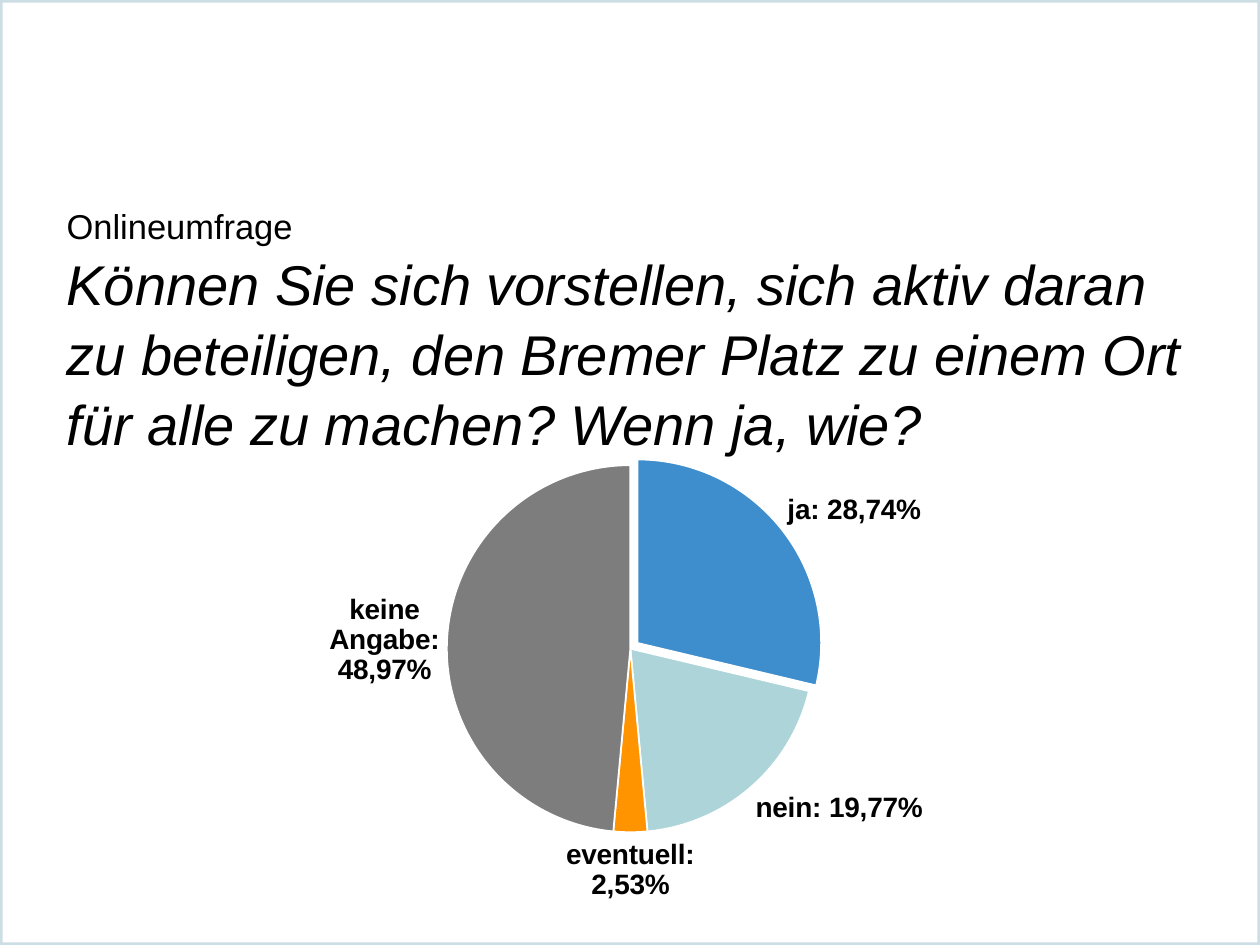
from dataclasses import dataclass

from lxml import etree
from pptx import Presentation
from pptx import util as u
from pptx.chart.data import CategoryChartData
from pptx.dml.color import RGBColor
from pptx.enum import chart as charts, shapes, text
from pptx.oxml.ns import qn


@dataclass(frozen=True)
class Theme:
    font: str = "Arial"
    ink: str = "000000"
    paper: str = "FFFFFF"
    frame: str = "005B79"
    frame_opacity: int = 20
    kicker_size: float = 19.7
    question_size: float = 32
    label_size: float = 16


@dataclass(frozen=True)
class Frame:
    left: float
    top: float
    width: float
    height: float

    def lengths(self) -> list[u.Length]:
        return [u.Pt(v) for v in (self.left, self.top, self.width, self.height)]


@dataclass(frozen=True)
class Answer:
    label: str
    percent: int
    color: str
    explosion: int = 0


@dataclass(frozen=True)
class TitlePart:
    wording: str
    size: float
    italic: bool = False


THEME = Theme()
PAGE = Frame(0, 0, 720, 540)
TITLE = Frame(31, 113, 658, 96.5)
CHART = Frame(113.76, 127.44, 492.48, 492.48)
PLOT_LAYOUT = {"x": 0.281, "y": 0.281, "w": 0.439, "h": 0.426}
TITLE_PARTS = [
    TitlePart("Onlineumfrage", THEME.kicker_size),
    TitlePart("Können Sie sich vorstellen, sich aktiv daran zu beteiligen, den "
              "Bremer Platz zu einem Ort für alle zu machen? Wenn ja, wie?",
              THEME.question_size, italic=True),
]
ANSWERS = [
    Answer("ja: 28,74%", 29, "3E8DCD", explosion=5),
    Answer("nein: 19,77%", 20, "ADD5D9"),
    Answer("eventuell: 2,53%", 3, "FF9300"),
    Answer("keine Angabe: 48,97%", 49, "7D7D7D"),
]


def rgb(value: str) -> RGBColor:
    return RGBColor.from_string(value)


def set_all(target, values: dict) -> None:
    for name, value in values.items():
        setattr(target, name, value)


def style_font(font, size: float, **extra) -> None:
    set_all(font, {"name": THEME.font, "size": u.Pt(size), **extra})
    font.color.rgb = rgb(THEME.ink)


def draw_page_frame(page) -> None:
    box = page.shapes.add_shape(shapes.MSO_SHAPE.RECTANGLE, *PAGE.lengths())
    box.shadow.inherit = False
    box.fill.background()
    box.line.width = u.Pt(3)
    box.line.color.rgb = rgb(THEME.frame)
    color = box.line.fill._xPr.find(f".//{qn('a:srgbClr')}")
    etree.SubElement(color, qn("a:alpha"), val=str(THEME.frame_opacity * 1000))


def draw_title(page, parts: list[TitlePart]) -> None:
    frame = page.shapes.add_textbox(*TITLE.lengths()).text_frame
    set_all(frame, {"word_wrap": True, "vertical_anchor": text.MSO_ANCHOR.TOP})
    para = frame.paragraphs[0]
    para.line_spacing = 1.04
    for index, part in enumerate(parts):
        if index:
            para.add_line_break()
        span = para.add_run()
        span.text = part.wording
        style_font(span.font, part.size, italic=part.italic)


def place_plot(chart, layout: dict[str, float]) -> None:
    """Fix the inner plot area as fractions of the chart."""
    area = chart.element.find(f".//{qn('c:plotArea')}")
    for old in area.findall(qn("c:layout")):
        area.remove(old)
    holder = etree.Element(qn("c:layout"))
    manual = etree.SubElement(holder, qn("c:manualLayout"))
    values = {"layoutTarget": "inner", "xMode": "edge", "yMode": "edge", **layout}
    for tag, value in values.items():
        etree.SubElement(manual, qn(f"c:{tag}"), val=str(value))
    area.insert(0, holder)


def explode(chart, index: int, amount: int) -> None:
    """Pull one slice out of the pie."""
    point = chart.element.findall(f".//{qn('c:dPt')}")[index]
    mark = etree.Element(qn("c:explosion"), val=str(amount))
    point.find(qn("c:spPr")).addprevious(mark)


def draw_pie(page, answers: list[Answer]) -> None:
    data = CategoryChartData()
    data.categories = [answer.label for answer in answers]
    data.add_series("Series 1", [answer.percent for answer in answers])
    chart = page.shapes.add_chart(
        charts.XL_CHART_TYPE.PIE, *CHART.lengths(), data).chart
    set_all(chart, {"has_legend": False, "has_title": False})
    style_font(chart.font, 10)
    place_plot(chart, PLOT_LAYOUT)

    plot = chart.plots[0]
    set_all(plot, {"vary_by_categories": True, "has_data_labels": True})
    labels = plot.data_labels
    set_all(labels, {
        "show_category_name": True,
        "show_value": False,
        "show_percentage": False,
        "number_format": "#,##0.00%",
        "number_format_is_linked": False,
        "position": charts.XL_LABEL_POSITION.OUTSIDE_END,
    })
    style_font(labels.font, THEME.label_size, bold=True)

    for index, answer in enumerate(answers):
        look = plot.series[0].points[index].format
        look.fill.solid()
        look.fill.fore_color.rgb = rgb(answer.color)
        look.line.width = u.Pt(1)
        look.line.color.rgb = rgb(THEME.paper)
        if answer.explosion:
            explode(chart, index, answer.explosion)


def main() -> None:
    deck = Presentation()
    set_all(deck, {"slide_width": u.Pt(PAGE.width), "slide_height": u.Pt(PAGE.height)})
    page = deck.slides.add_slide(deck.slide_layouts[6])
    draw_page_frame(page)
    draw_title(page, TITLE_PARTS)
    draw_pie(page, ANSWERS)
    deck.save("out.pptx")


if __name__ == "__main__":
    main()
